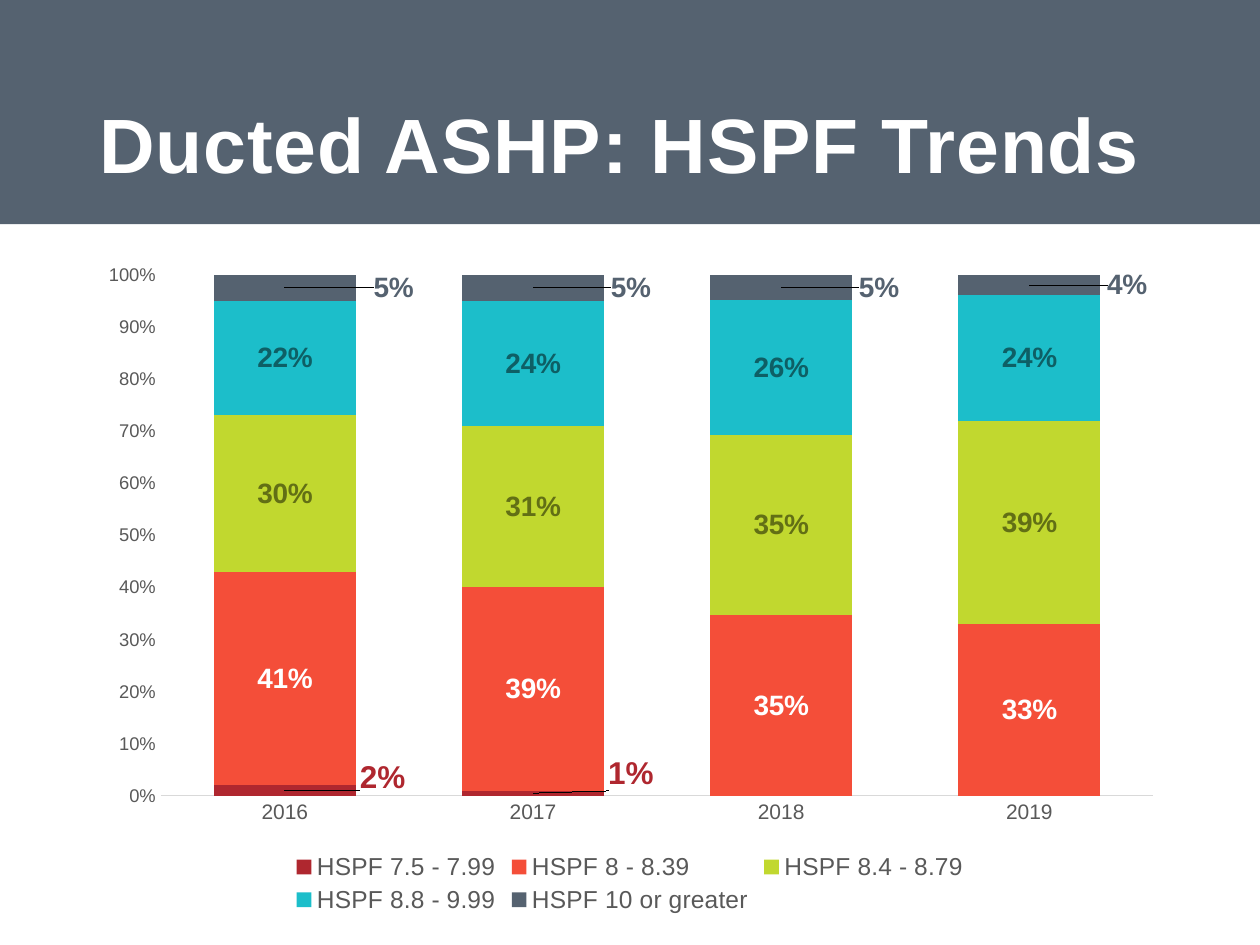
from copy import deepcopy
from lxml.etree import SubElement
from pptx import Presentation
from pptx.chart.data import CategoryChartData
from pptx.dml.color import RGBColor
from pptx.enum.chart import XL_CHART_TYPE, XL_LABEL_POSITION, XL_LEGEND_POSITION, XL_TICK_MARK
from pptx.enum.shapes import MSO_SHAPE
from pptx.enum.text import MSO_ANCHOR
from pptx.oxml import parse_xml
from pptx.oxml.ns import nsdecls, qn
from pptx.util import Inches, Pt

COLORS = {
    "slate": "556270", "white": "FFFFFF", "text": "595959", "axis": "D9D9D9",
    "crimson": "AF272F", "red": "F44E39", "lime": "C1D82F", "teal": "1CBECA",
    "dark lime": "626F15", "dark teal": "0E5F65",
}
YEARS = ["2016", "2017", "2018", "2019"]

# Name, yearly shares, fill, label colour, label size
BANDS = [
    ("HSPF 7.5 - 7.99", (0.02, 0.01, 0, 0), "crimson", "crimson", 18),
    ("HSPF 8 - 8.39", (0.41, 0.39, 0.35, 0.33), "red", "white", 16),
    ("HSPF 8.4 - 8.79", (0.3, 0.31, 0.35, 0.39), "lime", "dark lime", 16),
    ("HSPF 8.8 - 9.99", (0.22, 0.24, 0.26, 0.24), "teal", "dark teal", 16),
    ("HSPF 10 or greater", (0.05, 0.05, 0.05, 0.04), "slate", "slate", 16),
]
# Label shifts beside the thin bands, as shares of the chart; None hides a label
SHIFTS = {
    "HSPF 7.5 - 7.99": [(0.09, -0.02), (0.09, -0.03), None, None],
    "HSPF 10 or greater": [(0.1, 0), (0.09, 0), (0.09, 0), (0.09, 0)],
}


def set_font(font, size, color, bold=False):
    font.name = "Arial"
    font.size = Pt(size)
    font.bold = bold
    font.color.rgb = RGBColor.from_string(COLORS[color])


def add_layout(parent, **settings):
    layout = SubElement(parent, qn("c:layout"))
    manual = SubElement(layout, qn("c:manualLayout"))
    for tag, value in settings.items():
        SubElement(manual, qn(f"c:{tag}")).set("val", str(value))
    return layout


deck = Presentation()
deck.slide_width, deck.slide_height = Inches(10), Inches(7.5)
page = deck.slides.add_slide(deck.slide_layouts[6])
margin = Inches(0.69)
content_width = deck.slide_width - 2 * margin

# Header band
band = page.shapes.add_shape(MSO_SHAPE.RECTANGLE, 0, 0, deck.slide_width, Inches(1.78))
band.shadow.inherit = False
band.fill.solid()
band.fill.fore_color.rgb = RGBColor.from_string(COLORS["slate"])
band.line.fill.background()

# Title
box = page.shapes.add_textbox(margin, Inches(0.21), content_width, Inches(1.35))
box.text_frame.word_wrap = True
box.text_frame.vertical_anchor = MSO_ANCHOR.BOTTOM
para = box.text_frame.paragraphs[0]
para.line_spacing = 0.9
span = para.add_run()
span.text = "Ducted ASHP: HSPF Trends"
set_font(span.font, 44, "white", bold=True)
span.font._element.set("spc", "50")

# Chart
data = CategoryChartData(number_format="0%")
data.categories = YEARS
for name, shares, *_ in BANDS:
    data.add_series(name, shares)
chart = page.shapes.add_chart(
    XL_CHART_TYPE.COLUMN_STACKED_100, margin, Inches(2), content_width, Inches(5.29), data
).chart
chart.has_title = False
set_font(chart.font, 10, "text")
chart.font._element.getparent().getparent().getparent().addprevious(parse_xml(
    f'<c:spPr {nsdecls("c", "a")}><a:solidFill><a:srgbClr val="{COLORS["white"]}"/>'
    "</a:solidFill><a:ln><a:noFill/></a:ln></c:spPr>"
))

# Plot area
plot = chart.plots[0]
plot.gap_width, plot.overlap, plot.vary_by_categories = 75, 100, False
plot_area = plot._element.getparent()
for old_layout in plot_area.findall(qn("c:layout")):
    plot_area.remove(old_layout)
plot_area.insert(0, add_layout(
    plot_area, layoutTarget="inner", xMode="edge", yMode="edge",
    x=0.068, y=0.034, w=0.914, h=0.782,
))

# Axes and legend
years, percent = chart.category_axis, chart.value_axis
for axis, size in ((years, 12), (percent, 10.5)):
    axis.major_tick_mark = axis.minor_tick_mark = XL_TICK_MARK.NONE
    axis.has_major_gridlines = False
    set_font(axis.tick_labels.font, size, "text")
years.format.line.width = Pt(0.75)
years.format.line.color.rgb = RGBColor.from_string(COLORS["axis"])
percent.format.line.fill.background()
percent.minimum_scale, percent.maximum_scale, percent.major_unit = 0, 1, 0.1
percent.tick_labels.number_format = "0%"
percent.tick_labels.number_format_is_linked = False
chart.has_legend = True
chart.legend.position = XL_LEGEND_POSITION.BOTTOM
chart.legend.include_in_layout = False
set_font(chart.legend.font, 14, "text")

# Band colours and labels
for series, (name, _, fill, label_color, size) in zip(plot.series, BANDS):
    series.format.fill.solid()
    series.format.fill.fore_color.rgb = RGBColor.from_string(COLORS[fill])
    labels = series.data_labels
    labels.show_value = True
    labels.number_format, labels.number_format_is_linked = "0%", False
    labels.position = XL_LABEL_POSITION.CENTER
    set_font(labels.font, size, label_color, bold=True)

    # Labels moved beside their column
    shared = list(labels._element)
    for index, shift in enumerate(SHIFTS.get(name, [])):
        label = SubElement(labels._element, qn("c:dLbl"))
        SubElement(label, qn("c:idx")).set("val", str(index))
        if shift is None:
            SubElement(label, qn("c:delete")).set("val", "1")
        else:
            add_layout(label, x=shift[0], y=shift[1])
            for part in shared:
                if part.tag != qn("c:showLeaderLines"):
                    label.append(deepcopy(part))
        labels._element.insert(index, label)

deck.save("out.pptx")
